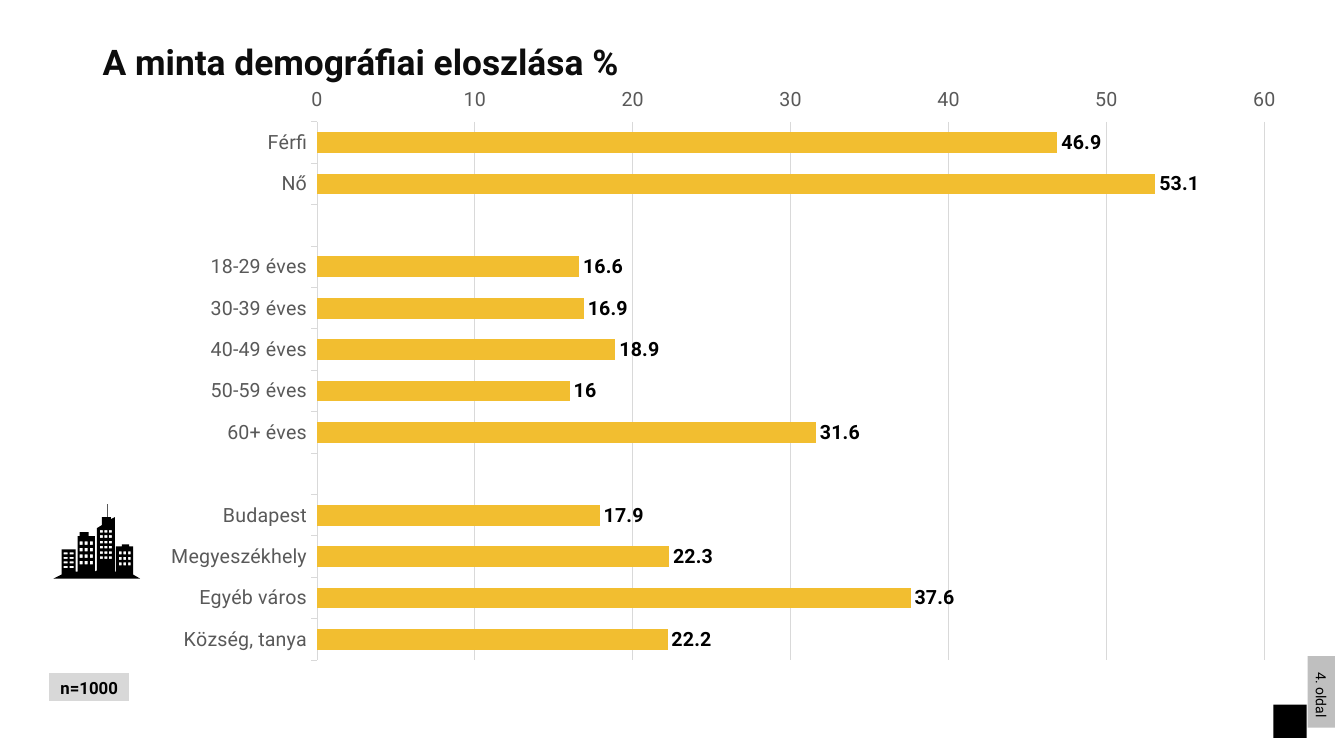
from lxml import etree
from pptx import Presentation
from pptx.chart.data import CategoryChartData
from pptx.dml.color import RGBColor
from pptx.enum.chart import XL_AXIS_CROSSES, XL_CHART_TYPE, XL_LABEL_POSITION, XL_TICK_MARK
from pptx.enum.shapes import MSO_SHAPE
from pptx.enum.text import MSO_ANCHOR, PP_ALIGN
from pptx.oxml.ns import qn
from pptx.util import Inches, Pt

BAR = XL_CHART_TYPE.BAR_CLUSTERED
MAXIMUM = XL_AXIS_CROSSES.MAXIMUM
OUTSIDE_END = XL_LABEL_POSITION.OUTSIDE_END
TICK_OUT = XL_TICK_MARK.OUTSIDE
RECT = MSO_SHAPE.RECTANGLE
MIDDLE = MSO_ANCHOR.MIDDLE
LEFT, CENTER, RIGHT = PP_ALIGN.LEFT, PP_ALIGN.CENTER, PP_ALIGN.RIGHT

WIDTH, HEIGHT = Inches(13.33), Inches(7.5)
FONT = "Roboto"
COLORS = {
    "black": "000000", "title": "0D0D0D", "axis": "595959", "grid": "D9D9D9",
    "bar": "F2BE30", "sample": "D8D8D8", "page": "BFBFBF", "white": "FFFFFF",
}

GROUPS = [
    [("Férfi", 46.9), ("Nő", 53.1)],
    [("18-29 éves", 16.6), ("30-39 éves", 16.9), ("40-49 éves", 18.9),
     ("50-59 éves", 16), ("60+ éves", 31.6)],
    [("Budapest", 17.9), ("Megyeszékhely", 22.3), ("Egyéb város", 37.6),
     ("Község, tanya", 22.2)],
]
PLOT = {"x": 0.212, "y": 0.054, "w": 0.762, "h": 0.852}

CELL = Inches(0.005)
SKYLINE = [
    (158, 140), (158, 84), (150, 84), (150, 80), (136, 80), (136, 84),
    (124, 84), (124, 134), (122, 134), (122, 26), (114, 30), (114, 26),
    (108, 26), (108, 0), (107, 0), (107, 26), (96, 26), (96, 42), (86, 48),
    (86, 132), (82, 134), (82, 64), (70, 64), (70, 56), (52, 56), (52, 64),
    (48, 64), (48, 134), (44, 134), (44, 90), (16, 90), (16, 140),
    (0, 148), (172, 148),
]
# Each entry: left, top, columns, rows, column pitch, row pitch, width, height
WINDOWS = [
    (20, 96, 2, 4, 12, 9, 8, 4),
    (52, 74, 3, 4, 10, 13, 6, 7),
    (92, 52, 3, 6, 9, 10.4, 6, 5),
    (130, 94, 3, 3, 9, 11, 5, 6),
]


def rgb(name):
    return RGBColor.from_string(COLORS[name])


def area(left, top, width, height):
    return (round(WIDTH * left / 100), round(HEIGHT * top / 100),
            round(WIDTH * width / 100), round(HEIGHT * height / 100))


def style_font(font, size, color="black", bold=False):
    font.name = FONT
    font.size = Pt(size)
    font.bold = bold
    font.color.rgb = rgb(color)


def write(s, text, size, color="black", bold=False, align=LEFT, wrap=True, spacing=1.0):
    tf = s.text_frame
    tf.word_wrap = wrap
    tf.vertical_anchor = MIDDLE
    p = tf.paragraphs[0]
    p.alignment = align
    p.line_spacing = spacing
    r = p.add_run()
    r.text = text
    style_font(r.font, size, color, bold)


def paint(s, fill, line=None):
    s.shadow.inherit = False
    s.fill.solid()
    s.fill.fore_color.rgb = rgb(fill)
    if line:
        s.line.color.rgb = rgb(line)
        s.line.width = Pt(1.5)
    else:
        s.line.fill.background()


def add_box(slide, place, fill, line=None):
    s = slide.shapes.add_shape(RECT, *area(*place))
    paint(s, fill, line)
    return s


def set_plot_layout(chart):
    plot_area = chart._chartSpace.chart.plotArea
    for old in plot_area.findall(qn("c:layout")):
        plot_area.remove(old)
    layout = etree.Element(qn("c:layout"))
    manual = etree.SubElement(layout, qn("c:manualLayout"))
    settings = [("layoutTarget", "inner"), ("xMode", "edge"), ("yMode", "edge")]
    for tag, value in settings + list(PLOT.items()):
        etree.SubElement(manual, qn(f"c:{tag}")).set("val", str(value))
    plot_area.insert(0, layout)


def draw_line(line):
    line.color.rgb = rgb("grid")
    line.width = Pt(0.75)


def add_demographics(slide, place):
    data = CategoryChartData(number_format="General")
    rows = []
    for group in GROUPS:
        rows += ([("", None)] if rows else []) + group
    data.categories = [label for label, _ in rows]
    data.add_series("Minta %", [value for _, value in rows])
    chart = slide.shapes.add_chart(BAR, *area(*place), data).chart
    chart.has_legend = False
    chart.has_title = False
    style_font(chart.font, 16)

    plot = chart.plots[0]
    plot.gap_width = 100
    plot.vary_by_categories = False
    series = plot.series[0]
    series.invert_if_negative = False
    series.format.fill.solid()
    series.format.fill.fore_color.rgb = rgb("bar")
    labels = series.data_labels
    labels.show_value = True
    labels.position = OUTSIDE_END
    style_font(labels.font, 14, bold=True)

    groups, percent = chart.category_axis, chart.value_axis
    for axis in (groups, percent):
        axis.major_tick_mark = TICK_OUT
        style_font(axis.tick_labels.font, 14, "axis")
    groups.reverse_order = True
    groups.crosses = MAXIMUM
    draw_line(groups.format.line)
    percent.minimum_scale = 0
    percent.maximum_scale = 60
    percent.major_unit = 10
    percent.format.line.fill.background()
    draw_line(percent.major_gridlines.format.line)
    set_plot_layout(chart)


def add_skyline(slide, left, top):
    builder = slide.shapes.build_freeform(*SKYLINE[0], scale=CELL)
    builder.add_line_segments(SKYLINE[1:])
    for x0, y0, cols, rows, dx, dy, w, h in WINDOWS:
        for i in range(cols * rows):
            x, y = x0 + i % cols * dx, y0 + i // cols * dy
            builder.move_to(x, y)
            builder.add_line_segments([(x + w, y), (x + w, y + h), (x, y + h)])
    paint(builder.convert_to_shape(*area(left, top, 0, 0)[:2]), "black")


def main():
    prs = Presentation()
    prs.slide_width, prs.slide_height = WIDTH, HEIGHT
    slide = prs.slides.add_slide(prs.slide_layouts[6])

    add_box(slide, (94.75, 93.2, 2.48, 4.4), "black")
    add_demographics(slide, (3.98, 11.6, 92.5, 83.6))
    title = slide.shapes.add_textbox(*area(6.9, 5.33, 61.07, 6.27))
    write(title, "A minta demográfiai eloszlása %", 25.2, "title", bold=True, spacing=0.9)
    sample = add_box(slide, (3.6, 88.93, 6.08, 4), "sample", "white")
    write(sample, "n=1000", 12, bold=True, align=CENTER, wrap=False)
    page = add_box(slide, (97.3, 86.8, 2.03, 9.47), "page")
    write(page, "4. oldal", 10, align=RIGHT)
    page.text_frame._txBody.bodyPr.set("vert", "vert")
    add_skyline(slide, 3.98, 66.67)
    prs.save("out.pptx")


if __name__ == "__main__":
    main()
